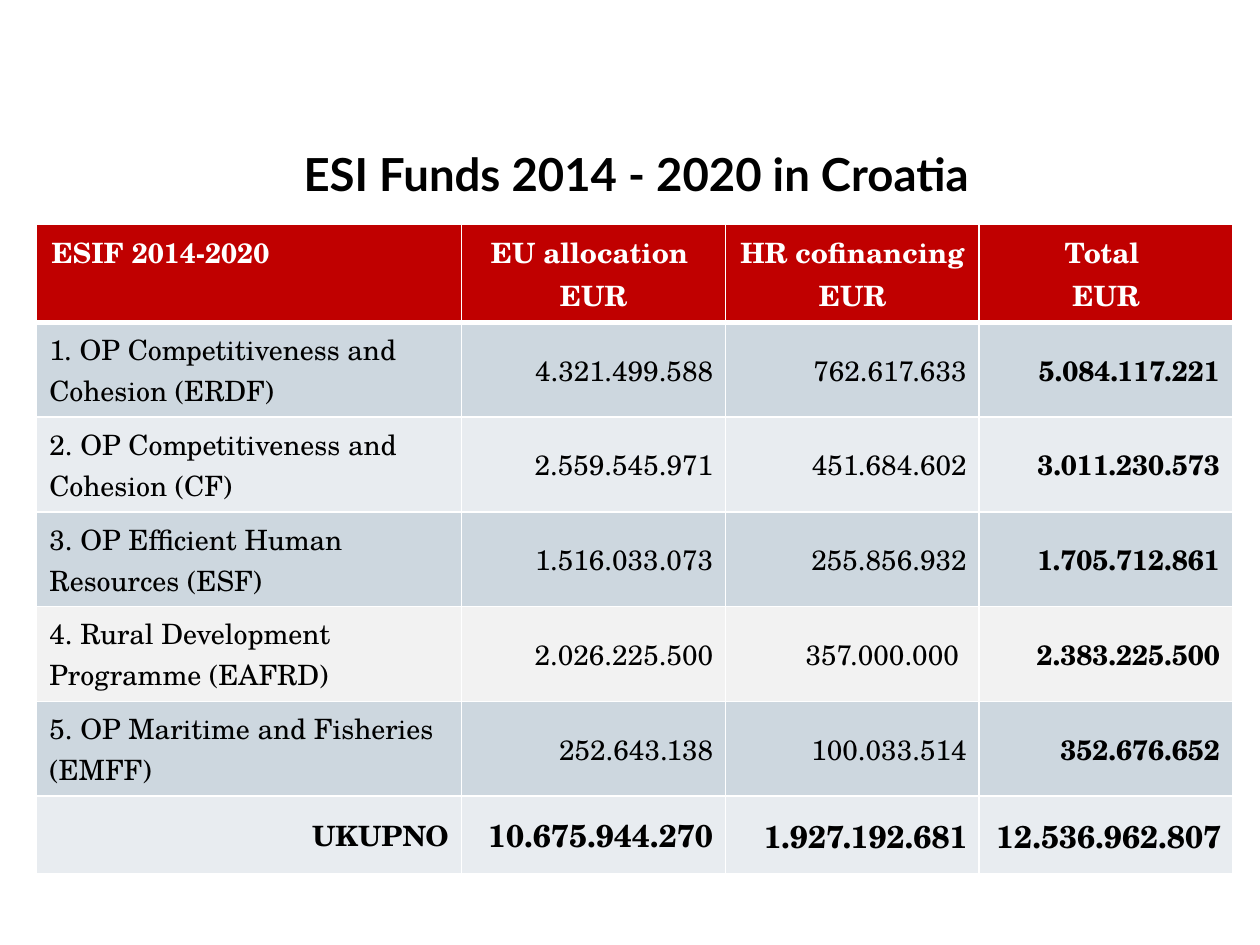
"""Build the slide on ESI Funds 2014 - 2020 in Croatia."""
from dataclasses import dataclass
from typing import Optional

import pptx
import pptx.dml.color
import pptx.enum.text
import pptx.oxml
import pptx.oxml.ns
import pptx.util
from pptx.util import Cm

ALIGN = pptx.enum.text.PP_ALIGN
ANCHOR = pptx.enum.text.MSO_ANCHOR


@dataclass(frozen=True)
class Theme:
    title_font: str = "Lato"
    table_font: str = "TeX Gyre Schola"
    title_size: int = 26
    table_size: int = 16
    total_size: int = 18
    black: str = "000000"
    white: str = "FFFFFF"
    red: str = "C00000"
    blue: str = "CDD7DF"
    pale: str = "E8ECF0"
    grey: str = "F2F2F2"
    rule: float = 1
    header_rule: float = 3


THEME = Theme()


@dataclass(frozen=True)
class Style:
    font: str = THEME.table_font
    size: int = THEME.table_size
    color: str = THEME.black
    bold: bool = False
    align: ALIGN = ALIGN.RIGHT


@dataclass(frozen=True)
class Fund:
    name: str
    allocation: str
    cofinancing: str
    total: str
    fill: str


TITLE = Style(THEME.title_font, THEME.title_size, bold=True, align=ALIGN.CENTER)
HEADER = Style(color=THEME.white, bold=True, align=ALIGN.CENTER)
HEADER_LEFT = Style(color=THEME.white, bold=True, align=ALIGN.LEFT)
NAME = Style(align=ALIGN.LEFT)
AMOUNT = Style()
STRONG = Style(bold=True)
GRAND = Style(size=THEME.total_size, bold=True)

HEADINGS = (
    ("ESIF 2014-2020",),
    ("EU allocation ", "EUR"),
    ("HR cofinancing EUR",),
    ("Total ", "EUR"),
)
FUNDS = (
    Fund("1. OP Competitiveness and Cohesion (ERDF)",
         "4.321.499.588", "762.617.633", "5.084.117.221", THEME.blue),
    Fund("2. OP Competitiveness and Cohesion (CF)",
         "2.559.545.971", "451.684.602", "3.011.230.573", THEME.pale),
    Fund("3. OP Efficient Human Resources (ESF)",
         "1.516.033.073", "255.856.932", "1.705.712.861", THEME.blue),
    Fund("4. Rural Development Programme (EAFRD)",
         "2.026.225.500", "357.000.000 ", "2.383.225.500", THEME.grey),
    Fund("5. OP Maritime and Fisheries (EMFF)",
         "252.643.138", "100.033.514", "352.676.652", THEME.blue),
)
TOTALS = ("UKUPNO", "10.675.944.270", "1.927.192.681", "12.536.962.807")
COLUMN_WIDTHS = (8.56, 5.33, 5.11, 5.11)
ROW_HEIGHTS = (1.98, *(1.91,) * len(FUNDS), 1.57, 1.4)


def write(frame, lines: tuple[str, ...], style: Style) -> None:
    """Write one paragraph per line in the given style."""
    for index, line in enumerate(lines):
        para = frame.add_paragraph() if index else frame.paragraphs[0]
        para.alignment = style.align
        span = para.add_run()
        span.text = line
        span.font.name = style.font
        span.font.size = pptx.util.Pt(style.size)
        span.font.bold = style.bold
        span.font.color.rgb = pptx.dml.color.RGBColor.from_string(style.color)


def draw_borders(cell, top: float, bottom: float) -> None:
    """Give a cell white borders, with widths in points."""
    properties = cell._tc.get_or_add_tcPr()
    sides = {"L": THEME.rule, "R": THEME.rule, "T": top, "B": bottom}
    for side, width in sides.items():
        properties.append(pptx.oxml.parse_xml(
            f'<a:ln{side} {pptx.oxml.ns.nsdecls("a")} w="{pptx.util.Pt(width)}">'
            f'<a:solidFill><a:srgbClr val="{THEME.white}"/></a:solidFill></a:ln{side}>'))


def paint(cell, row: int, color: Optional[str]) -> None:
    """Set the borders, fill and anchor of a cell."""
    draw_borders(cell,
                 THEME.header_rule if row == 1 else THEME.rule,
                 THEME.header_rule if row == 0 else THEME.rule)
    cell.vertical_anchor = ANCHOR.MIDDLE
    if color is None:
        cell.fill.background()
    else:
        cell.fill.solid()
        cell.fill.fore_color.rgb = pptx.dml.color.RGBColor.from_string(color)


def add_title(page) -> None:
    """Add the slide title."""
    box = page.shapes.add_textbox(Cm(0.71), Cm(1.73), Cm(24.25), Cm(2.69))
    box.text_frame.word_wrap = True
    box.text_frame.margin_top = Cm(1.21)
    write(box.text_frame, ("ESI Funds 2014 - 2020 in Croatia",), TITLE)


def add_funds_table(page) -> None:
    """Add the table of allocations with its header, totals and closing row."""
    table = page.shapes.add_table(
        len(ROW_HEIGHTS), len(COLUMN_WIDTHS), Cm(0.74), Cm(4.52),
        Cm(sum(COLUMN_WIDTHS)), Cm(sum(ROW_HEIGHTS))).table
    table.first_row = table.horz_banding = False
    for column, width in zip(table.columns, COLUMN_WIDTHS):
        column.width = Cm(width)
    for row, height in zip(table.rows, ROW_HEIGHTS):
        row.height = Cm(height)

    body = [tuple((text,) for text in (fund.name, fund.allocation,
                                       fund.cofinancing, fund.total))
            for fund in FUNDS]
    contents = [HEADINGS, *body, tuple((text,) for text in TOTALS)]
    styles = [(HEADER_LEFT, HEADER, HEADER, HEADER),
              *[(NAME, AMOUNT, AMOUNT, STRONG)] * len(FUNDS),
              (STRONG, GRAND, GRAND, GRAND)]
    fills = [THEME.red, *(fund.fill for fund in FUNDS), THEME.pale, None]

    for row, fill in enumerate(fills):
        for column in range(len(COLUMN_WIDTHS)):
            cell = table.cell(row, column)
            paint(cell, row, fill)
            if row < len(contents):
                write(cell.text_frame, contents[row][column], styles[row][column])

    corner = table.cell(0, 0)
    corner.vertical_anchor = ANCHOR.TOP
    corner.margin_left = Cm(0.3)
    for column in (2, 3):
        cell = table.cell(len(FUNDS) + 1, column)
        cell.margin_left = cell.margin_top = Cm(0.03)
        cell.margin_right, cell.margin_bottom = Cm(0.23), Cm(0)
    last = len(ROW_HEIGHTS) - 1
    table.cell(last, 0).merge(table.cell(last, len(COLUMN_WIDTHS) - 1))


def main() -> None:
    """Build and save the deck."""
    deck = pptx.Presentation()
    deck.slide_width, deck.slide_height = Cm(25.4), Cm(19.05)
    page = deck.slides.add_slide(deck.slide_layouts[6])
    add_title(page)
    add_funds_table(page)
    deck.save("out.pptx")


if __name__ == "__main__":
    main()
